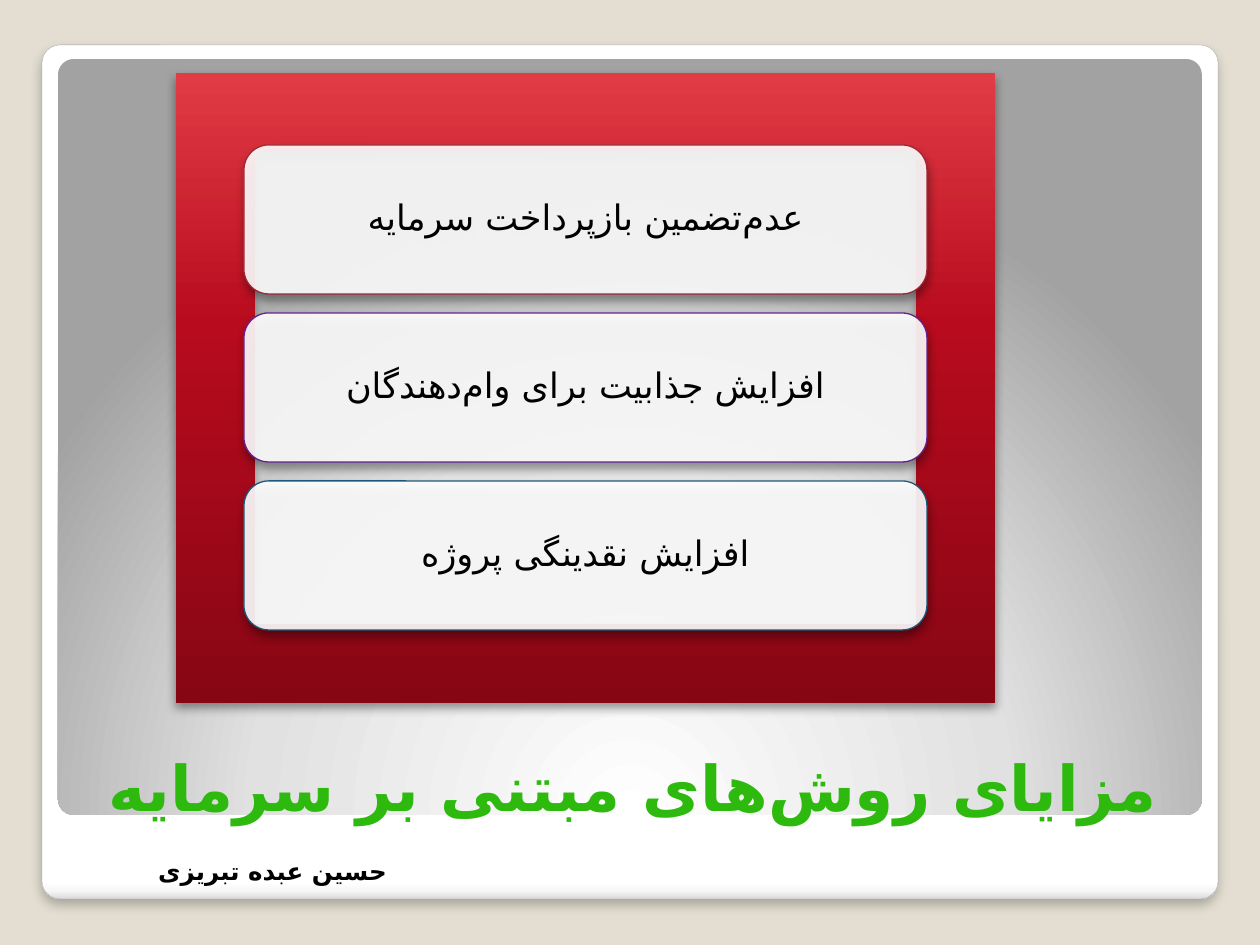
from dataclasses import dataclass

from pptx import Presentation
from pptx.dml.color import RGBColor
from pptx.enum.shapes import MSO_SHAPE as Shape
from pptx.enum.text import MSO_ANCHOR as Anchor, PP_ALIGN as Align
from pptx.oxml import parse_xml
from pptx.oxml.ns import nsdecls, qn
from pptx.util import Emu, Pt

PX_PER_INCH = 126
ZWNJ = chr(0x200C)  # zero-width non-joiner between Persian word parts


@dataclass(frozen=True)
class Theme:
    font: str = "DejaVu Sans"
    page: str = "E3DED1"
    ink: str = "000000"
    title: str = "2DB90E"
    box: str = "FFFFFF"
    box_alpha: int = 90
    card_line: str = "A4A4A4"
    card: tuple = ((0, "FFFFFF"), (98, "FFFFFF"), (99, "F7F7F7"), (100, "DADADA"))
    panel: tuple = ((0, "FFFFFF"), (55, "E1E1E1"), (100, "A2A2A2"))
    frame: tuple = ((0, "870614"), (60, "B80B1E"), (100, "E13C45"))
    card_shadow: tuple = (25, 6, 4)
    frame_shadow: tuple = (40, 5.2, 3)
    title_size: int = 36
    box_size: int = 20
    author_size: int = 14


THEME = Theme()
ADVANTAGES = (
    (f"عدم{ZWNJ}{ZWNJ}تضمین بازپرداخت سرمایه", "9F2936"),
    (f"افزایش جذابیت برای وام{ZWNJ}دهندگان", "66228E"),
    ("افزایش نقدینگی پروژه", "1B587C"),
)


def px(length):
    return Emu(round(length * 914400 / PX_PER_INCH))


def place(shape, box):
    shape.left, shape.top, shape.width, shape.height = map(px, box)


def write(shape, text, size, color=THEME.ink, bold=False, anchor=Anchor.MIDDLE,
          inset=None, line_spacing=None, space_after=None):
    """Fill a shape with one centred right-to-left paragraph."""
    frame = shape.text_frame
    frame.word_wrap = True
    frame.vertical_anchor = anchor
    if inset is not None:
        frame.margin_left = frame.margin_right = px(inset)
        frame.margin_top = frame.margin_bottom = px(inset)
    paragraph = frame.paragraphs[0]
    paragraph.alignment = Align.CENTER
    paragraph.line_spacing = line_spacing
    paragraph.space_after = space_after
    paragraph._p.get_or_add_pPr().set("rtl", "1")
    run = paragraph.add_run()
    run.text = text
    run.font.size, run.font.bold = Pt(size), bold
    run.font.color.rgb = RGBColor.from_string(color)
    run.font.name = THEME.font
    run._r.get_or_add_rPr().append(
        parse_xml(f'<a:cs {nsdecls("a")} typeface="{THEME.font}"/>'))


def add_block(slide, kind, box, line=None, line_width=0.75, shadow=None):
    """Add a shape with a solid fill, ready to be refined."""
    block = slide.shapes.add_shape(kind, *map(px, box))
    block.fill.solid()
    block.fill.fore_color.rgb = RGBColor.from_string(THEME.box)
    if line:
        block.line.color.rgb = RGBColor.from_string(line)
        block.line.width = Pt(line_width)
    else:
        block.line.fill.background()
    block.shadow.inherit = False
    if shadow:
        alpha, blur, distance = shadow
        block._element.spPr.find(qn("a:effectLst")).append(parse_xml(
            f'<a:outerShdw {nsdecls("a")} blurRad="{Pt(blur)}" dist="{Pt(distance)}" '
            f'dir="5400000" algn="t" rotWithShape="0"><a:srgbClr val="000000">'
            f'<a:alpha val="{alpha * 1000}"/></a:srgbClr></a:outerShdw>'))
    return block


def linear(angle):
    return f'<a:lin ang="{angle * 60000}" scaled="0"/>'


def circular(left, top, right, bottom):
    return (f'<a:path path="circle"><a:fillToRect l="{left * 1000}" t="{top * 1000}" '
            f'r="{right * 1000}" b="{bottom * 1000}"/></a:path>')


def shade(block, stops, direction):
    """Replace the solid fill by a gradient of (percent, colour) stops."""
    marks = "".join(f'<a:gs pos="{position * 1000}"><a:srgbClr val="{color}"/></a:gs>'
                    for position, color in stops)
    properties = block._element.spPr
    properties.replace(properties.find(qn("a:solidFill")), parse_xml(
        f'<a:gradFill {nsdecls("a")} rotWithShape="1"><a:gsLst>{marks}</a:gsLst>'
        f'{direction}</a:gradFill>'))


def build_backdrop(slide, box):
    left, top, width, height = box
    slide.background.fill.solid()
    slide.background.fill.fore_color.rgb = RGBColor.from_string(THEME.page)
    card = add_block(slide, Shape.ROUNDED_RECTANGLE, box, THEME.card_line, 0.16,
                     THEME.card_shadow)
    shade(card, THEME.card, linear(90))
    panel = add_block(slide, Shape.ROUNDED_RECTANGLE,
                      (left + 16, top + 14, width - 32, height - 98))
    shade(panel, THEME.panel, circular(50, 175, 50, -75))
    for rounded in (card, panel):
        rounded.adjustments[0] = 0.021
    author = slide.shapes.add_textbox(*map(px, (left + 31, top + 805, 399, 43)))
    write(author, "حسین عبده تبریزی", THEME.author_size, bold=True, anchor=Anchor.TOP)


def build_title(slide, box):
    title = slide.shapes.title
    place(title, box)
    slide.shapes._spTree.append(title._element)  # in front of the backdrop
    write(title, f"مزایای روش{ZWNJ}های مبتنی بر سرمایه", THEME.title_size, THEME.title,
          bold=True)


def build_advantages(slide, box):
    left, top, width, height = box
    frame = add_block(slide, Shape.FRAME, box, shadow=THEME.frame_shadow)
    shade(frame, THEME.frame, linear(270))
    side, row, gap = 68, 149, 19
    first = top + (height - len(ADVANTAGES) * (row + gap) + gap) // 2
    for index, (advantage, outline) in enumerate(ADVANTAGES):
        card = add_block(slide, Shape.ROUNDED_RECTANGLE,
                         (left + side, first + index * (row + gap), width - 2 * side, row),
                         outline, shadow=THEME.frame_shadow)
        card._element.spPr.find(qn("a:solidFill"))[0].append(parse_xml(
            f'<a:alpha {nsdecls("a")} val="{THEME.box_alpha * 1000}"/>'))
        write(card, advantage, THEME.box_size, inset=10, line_spacing=0.9,
              space_after=Pt(7))


def main():
    deck = Presentation()
    deck.slide_width, deck.slide_height = px(1260), px(945)
    slide = deck.slides.add_slide(deck.slide_layouts[5])
    build_backdrop(slide, (42, 45, 1176, 854))
    build_title(slide, (69, 714, 1128, 145))
    build_advantages(slide, (176, 73, 819, 630))
    deck.save("out.pptx")


if __name__ == "__main__":
    main()
